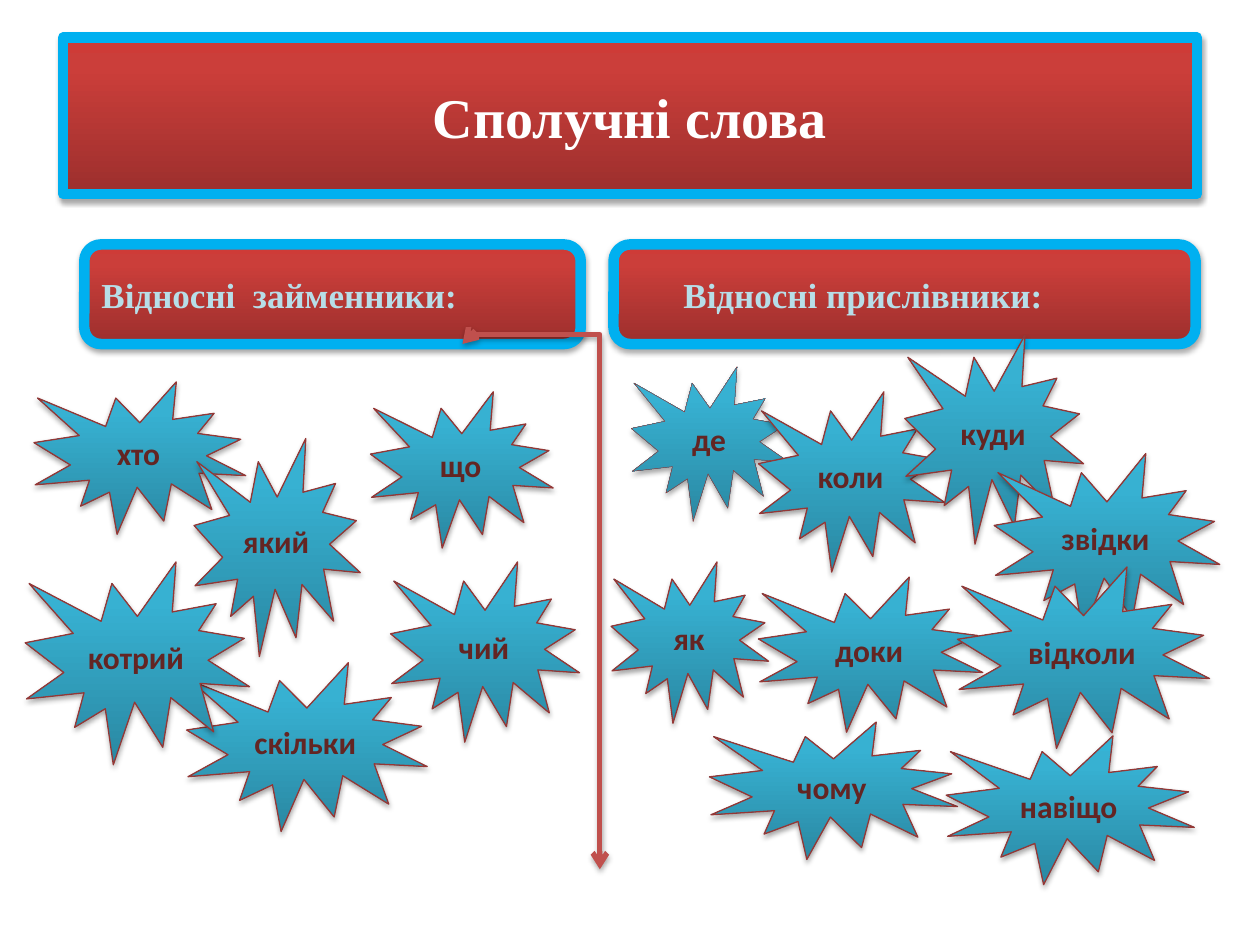
from lxml import etree
from pptx import Presentation
from pptx.dml.color import RGBColor
from pptx.enum.shapes import MSO_CONNECTOR, MSO_SHAPE
from pptx.enum.text import MSO_ANCHOR, PP_ALIGN
from pptx.oxml.ns import qn
from pptx.util import Pt

RECT = MSO_SHAPE.RECTANGLE
ROUND = MSO_SHAPE.ROUNDED_RECTANGLE
BURST = MSO_SHAPE.EXPLOSION1
ELBOW = MSO_CONNECTOR.ELBOW
MIDDLE = MSO_ANCHOR.MIDDLE
LEFT, CENTER = PP_ALIGN.LEFT, PP_ALIGN.CENTER

WHITE = RGBColor(0xFF, 0xFF, 0xFF)
SKY = RGBColor(0x00, 0xB0, 0xF0)
PALE_BLUE = RGBColor(0xB7, 0xDE, 0xE8)
BROWN = RGBColor(0x63, 0x25, 0x23)
DARK_RED = RGBColor(0x95, 0x37, 0x35)
RED = RGBColor(0xC0, 0x50, 0x4D)
RED_GRADIENT = (
    (0, RGBColor(0x9C, 0x2F, 0x2D)),
    (80, RGBColor(0xCB, 0x3E, 0x3A)),
    (100, RGBColor(0xCE, 0x3B, 0x37)),
)
TEAL_GRADIENT = (
    (0, RGBColor(0x2A, 0x88, 0xA2)),
    (80, RGBColor(0x37, 0xB1, 0xD2)),
    (100, RGBColor(0x34, 0xB4, 0xD6)),
)

SERIF, SANS = "Times New Roman", "Calibri"

PRONOUNS = (
    ("хто", 19.4, 218.2, 121, 87.1),
    ("що", 211.7, 223.9, 104.4, 89.3),
    ("який", 110.9, 250.6, 95, 124.6),
    ("скільки", 106.6, 378.7, 137.5, 96.5),
    ("чий", 223.2, 321.1, 108, 103),
    ("котрий", 14.4, 321.1, 128.2, 115.9),
)
ADVERBS = (
    ("де", 360.7, 209.5, 90, 88.6),
    ("коли", 433.4, 223.9, 106.6, 103),
    ("куди", 517, 191.5, 102.2, 119.5),
    ("звідки", 568.1, 259.2, 128.9, 103),
    ("як", 349.2, 321.1, 90, 92.2),
    ("доки", 433.4, 329.8, 128.2, 88.6),
    ("відколи", 547.2, 324, 144, 103.7),
    ("чому", 405.4, 412.6, 141.8, 78.5),
    ("навіщо", 540.7, 420.5, 141.8, 85),
)


def add(parent, tag, **attrs):
    child = etree.SubElement(parent, qn(tag))
    for name, value in attrs.items():
        child.set(name, str(value))
    return child


class Slide:
    def __init__(self, prs):
        self.s = prs.slides.add_slide(prs.slide_layouts[6])

    def shadow(self, effects):
        shadow = add(effects, "a:outerShdw", blurRad=Pt(3.1), dist=Pt(1.8),
                     dir=5400000, rotWithShape=0)
        color = add(shadow, "a:srgbClr", val="000000")
        add(color, "a:alpha", val=35000)

    def gradient(self, sp, stops):
        sp.fill.gradient()
        sp.fill.gradient_angle = 90
        stop_list = sp._element.spPr.find(".//" + qn("a:gsLst"))
        for old in list(stop_list):
            stop_list.remove(old)
        for position, color in stops:
            stop = add(stop_list, "a:gs", pos=position * 1000)
            add(stop, "a:srgbClr", val=color)

    def shape(self, kind, box, stops, line, width):
        sp = self.s.shapes.add_shape(kind, *map(Pt, box))
        self.gradient(sp, stops)
        sp.line.color.rgb = line
        sp.line.width = Pt(width)
        sp.shadow.inherit = False
        self.shadow(sp._element.spPr.find(qn("a:effectLst")))
        return sp

    def text(self, sp, text, font, size, color, align=CENTER):
        tf = sp.text_frame
        tf.vertical_anchor = MIDDLE
        p = tf.paragraphs[0]
        p.alignment = align
        r = p.add_run()
        r.text = text
        r.font.name = font
        r.font.size = Pt(size)
        r.font.bold = True
        r.font.color.rgb = color

    def title(self, text, *box):
        sp = self.shape(RECT, box, RED_GRADIENT, SKY, 6)
        self.text(sp, text, SERIF, 32, WHITE)

    def heading(self, text, *box, indent=0):
        sp = self.shape(ROUND, box, RED_GRADIENT, SKY, 6)
        sp.text_frame.margin_left = Pt(7.2 + indent)
        self.text(sp, text, SERIF, 20, PALE_BLUE, LEFT)

    def burst(self, text, *box, width=0.75):
        sp = self.shape(BURST, box, TEAL_GRADIENT, DARK_RED, width)
        sp.text_frame.word_wrap = False
        self.text(sp, text, SANS, 18, BROWN)

    def divider(self, left, top, width, height, bend):
        line = self.s.shapes.add_connector(
            ELBOW, Pt(left + width), Pt(top), Pt(left), Pt(top + height))
        line.line.color.rgb = RED
        line.line.width = Pt(3)
        spPr = line._element.spPr
        spPr.find(qn("a:xfrm")).set("rot", str(270 * 60000))
        guides = spPr.find(".//" + qn("a:avLst"))
        add(guides, "a:gd", name="adj1", fmla=f"val {bend}")
        ln = spPr.find(qn("a:ln"))
        for end in ("a:headEnd", "a:tailEnd"):
            add(ln, end, type="arrow")
        self.shadow(add(spPr, "a:effectLst"))


def main():
    prs = Presentation()
    prs.slide_width, prs.slide_height = Pt(720), Pt(540)
    s = Slide(prs)
    s.title("Сполучні слова", 36, 21.6, 648, 89.3)
    s.heading("Відносні  займенники:", 48.2, 139.7, 283.7, 56.9)
    for word in PRONOUNS:
        s.burst(*word)
    s.heading("Відносні прислівники:", 350.6, 139.7, 332.6, 56.9, indent=30)
    for i, word in enumerate(ADVERBS):
        s.burst(*word, width=0.75 if i else 0.25)
    s.divider(153.4, 307.4, 300.2, 78.5, -1800)
    prs.save("out.pptx")


if __name__ == "__main__":
    main()
